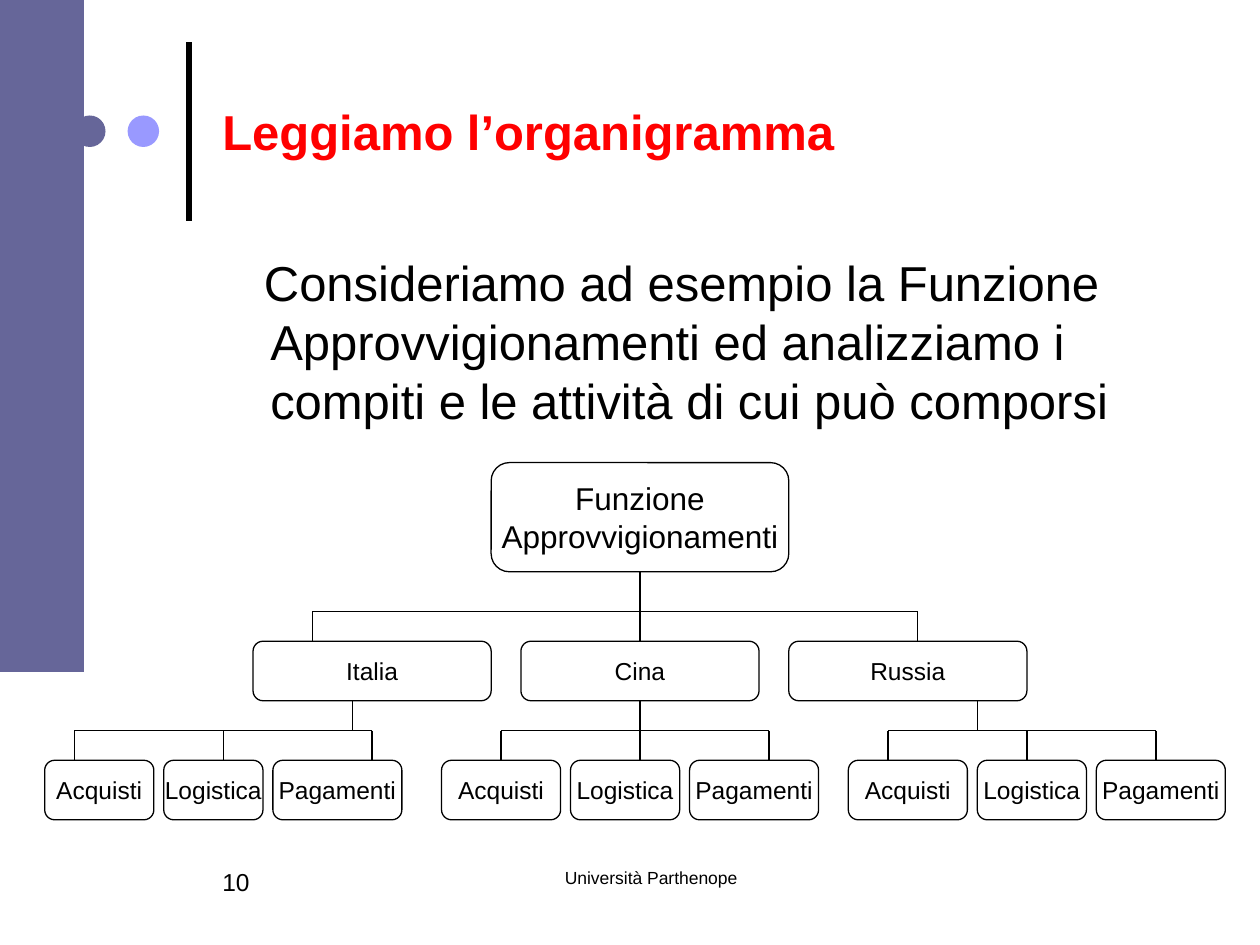
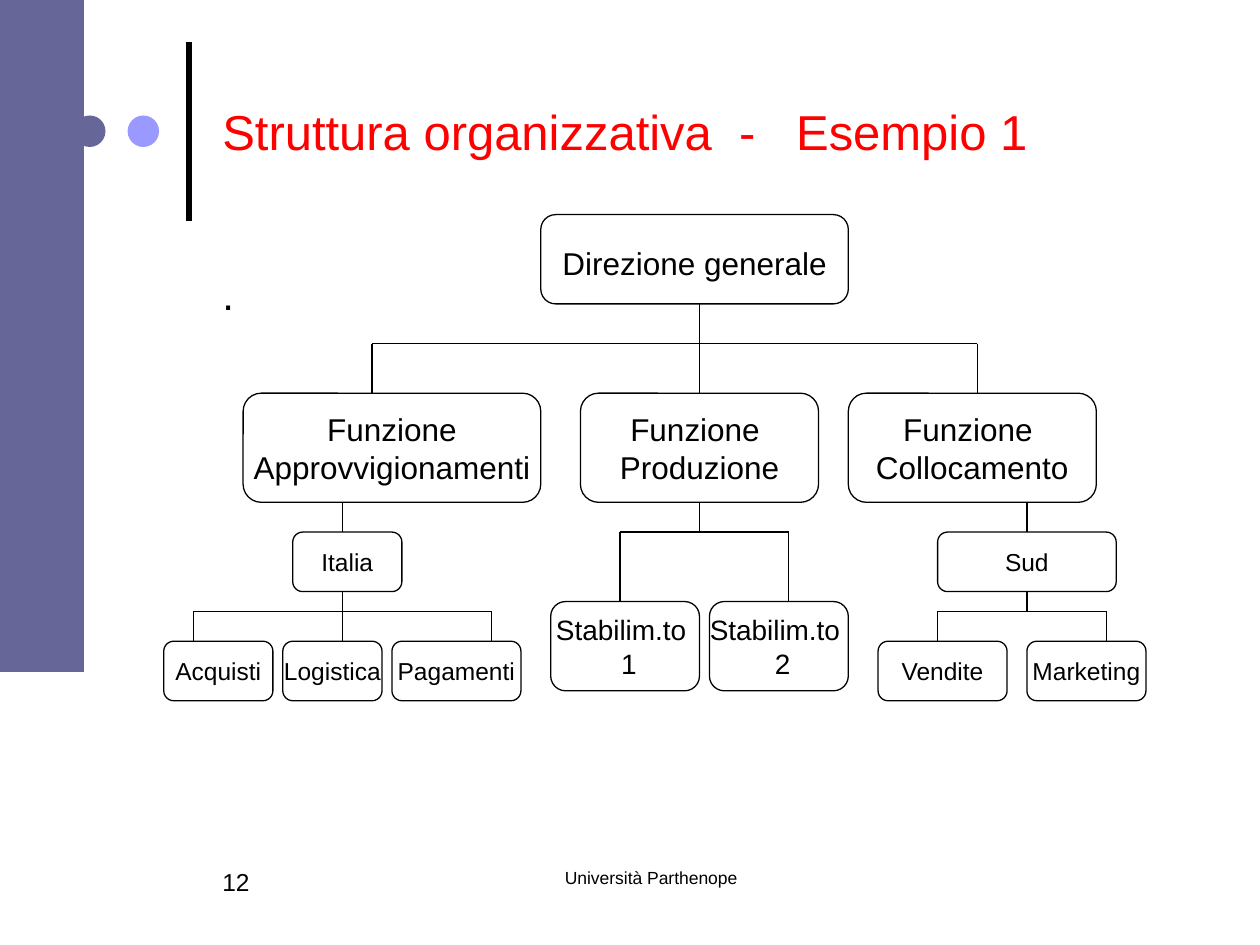
from dataclasses import dataclass

from lxml.etree import SubElement
from pptx import Presentation
from pptx.dml.color import RGBColor
from pptx.enum.shapes import MSO_CONNECTOR, MSO_SHAPE
from pptx.enum.text import MSO_ANCHOR, PP_ALIGN
from pptx.oxml.ns import qn
from pptx.util import Inches, Pt

BLACK = RGBColor(0, 0, 0)
WHITE = RGBColor(255, 255, 255)
RED = RGBColor(255, 0, 0)
SLATE = RGBColor(0x66, 0x66, 0x99)
LILAC = RGBColor(0x99, 0x99, 0xFF)
FONT = "Arial"


@dataclass
class Grid:
    """Square cells of one size, counted from a corner in inches."""
    left: float
    top: float
    cell: float

    def x(self, col):
        return Inches(self.left + col * self.cell)

    def y(self, row):
        return Inches(self.top + row * self.cell)

    def box(self, col, row, cols, rows):
        return (self.x(col), self.y(row),
                Inches(cols * self.cell), Inches(rows * self.cell))


PAGE = Grid(0, 0, 1 / 12)
CHART = Grid(0.04, 0.05, 1 / 12.7)  # cells of 2 mm
BOX_ROWS = 6
HEAD_ROWS = 11


def write(tf, text, size, color=BLACK, bold=False, align=PP_ALIGN.LEFT,
          anchor=MSO_ANCHOR.TOP, wrap=True, margin=0, indent=0):
    """Fill a text frame, one paragraph for each line of the text."""
    tf.word_wrap = wrap
    tf.vertical_anchor = anchor
    for i, line in enumerate(text.split("\n")):
        p = tf.paragraphs[0] if i == 0 else tf.add_paragraph()
        p.alignment = align
        if margin:
            pPr = p._p.get_or_add_pPr()
            pPr.set("marL", str(Inches(margin)))
            pPr.set("indent", str(Inches(indent)))
        r = p.add_run()
        r.text = line
        r.font.name = FONT
        r.font.size = Pt(size)
        r.font.bold = bold
        r.font.color.rgb = color


def add_text(s, box, text, size, **fmt):
    write(s.shapes.add_textbox(*box).text_frame, text, size, **fmt)


def add_shape(s, kind, box, fill, line=None):
    sp = s.shapes.add_shape(kind, *box)
    sp.shadow.inherit = False
    sp.fill.solid()
    sp.fill.fore_color.rgb = fill
    if line is None:
        sp.line.fill.background()
    else:
        sp.line.color.rgb = line
        sp.line.width = Pt(0.75)
    return sp


def add_line(s, grid, start, end, width=0.75):
    cx = s.shapes.add_connector(
        MSO_CONNECTOR.STRAIGHT, grid.x(start[0]), grid.y(start[1]),
        grid.x(end[0]), grid.y(end[1]))
    cx.line.color.rgb = BLACK
    cx.line.width = Pt(width)
    SubElement(cx._element.spPr, qn("a:effectLst"))


def unit(s, grid, col, row, cols, rows, text, size, drop=0):
    """One rounded box of the chart; drop lowers its text, in inches."""
    sp = add_shape(s, MSO_SHAPE.FLOWCHART_ALTERNATE_PROCESS,
                   grid.box(col, row, cols, rows), WHITE, BLACK)
    write(sp.text_frame, text, size, align=PP_ALIGN.CENTER,
          anchor=MSO_ANCHOR.MIDDLE, wrap=False)
    sp.text_frame.margin_top = Inches(0.05 + 2 * drop)


def unit_row(s, grid, col, row, units, rows=BOX_ROWS, size=14, gap=1):
    """Boxes side by side; units holds (text, columns) pairs."""
    for text, cols in units:
        unit(s, grid, col, row, cols, rows, text, size)
        col += cols + gap


def fork(s, grid, stem, top, bar, bottom, drops):
    """A stem down to a bar, and a line from the bar to each lower box."""
    add_line(s, grid, (stem, top), (stem, bar))
    add_line(s, grid, (drops[0], bar), (drops[-1], bar))
    for col in drops:
        add_line(s, grid, (col, bar), (col, bottom))


def page(prs, number, title, bold=False):
    """A new slide with the side band, dots, title and footer."""
    s = prs.slides.add_slide(prs.slide_layouts[6])
    add_line(s, PAGE, (18, 21), (18, 4), width=3)
    for col, color in ((7.05, SLATE), (12.15, LILAC)):
        add_shape(s, MSO_SHAPE.OVAL, PAGE.box(col, 11, 3, 3), color)
    add_shape(s, MSO_SHAPE.RECTANGLE, PAGE.box(0, 0, 8, 64), SLATE)
    add_text(s, PAGE.box(43, 82, 38, 6), "Università Parthenope", 10,
             align=PP_ALIGN.CENTER)
    add_text(s, PAGE.box(20, 82, 17, 6), number, 14)
    add_text(s, PAGE.box(20, 2.5, 92, 20), title, 28, color=RED, bold=bold,
             anchor=MSO_ANCHOR.MIDDLE)
    return s


def purchasing_chart(s, grid):
    unit(s, grid, 49, 46, 30, HEAD_ROWS, "Funzione\nApprovvigionamenti", 18)
    fork(s, grid, 64, 57, 61, 64, (31, 64, 92))
    unit_row(s, grid, 25, 64, [(name, 24) for name in ("Italia", "Cina", "Russia")],
             gap=3)
    countries = (  # stem, drops, first column, box widths
        (35, (7, 22, 37), 4, (11, 10, 13)),
        (64, (50, 64, 77), 44, (12, 11, 13)),
        (98, (89, 103, 116), 85, (12, 11, 13)),
    )
    for stem, drops, col, widths in countries:
        fork(s, grid, stem, 70, 73, 76, drops)
        unit_row(s, grid, col, 76,
                 zip(("Acquisti", "Logistica", "Pagamenti"), widths))


def company_chart(s, grid):
    unit(s, grid, 54, 21, 31, 9, "Direzione generale", 18, drop=0.03)
    fork(s, grid, 70, 30, 34, 39, (37, 70, 98))
    for col, cols, text in ((24, 30, "Funzione\nApprovvigionamenti"),
                            (58, 24, "Funzione \nProduzione"),
                            (85, 25, "Funzione \nCollocamento")):
        unit(s, grid, col, 39, cols, HEAD_ROWS, text, 18)

    fork(s, grid, 70, 50, 53, 60, (62, 79))
    unit_row(s, grid, 55, 60, (("Stabilim.to \n 1", 15), ("Stabilim.to \n 2", 14)),
             rows=9, size=16)

    branches = (  # stem, area box, drops, first column, gap, boxes
        (34, (29, 11, "Italia"), (19, 34, 49), 16, 1,
         (("Acquisti", 11), ("Logistica", 10), ("Pagamenti", 13))),
        (103, (94, 18, "Sud"), (94, 111), 88, 2,
         (("Vendite", 13), ("Marketing", 12))),
    )
    for stem, (area_col, cols, area), drops, col, gap, units in branches:
        add_line(s, grid, (stem, 50), (stem, 53))
        unit(s, grid, area_col, 53, cols, BOX_ROWS, area, 14)
        fork(s, grid, stem, 59, 61, 64, drops)
        unit_row(s, grid, col, 64, units, gap=gap)


def main():
    prs = Presentation()
    prs.slide_width, prs.slide_height = Inches(10), Inches(7.5)

    s = page(prs, "10", "Leggiamo l’organigramma", bold=True)
    add_text(s, PAGE.box(20, 23.5, 92, 20),
             "Consideriamo ad esempio la Funzione Approvvigionamenti ed "
             "analizziamo i compiti e le attività di cui può comporsi",
             28, margin=0.38, indent=-0.05)
    purchasing_chart(s, CHART)

    s = page(prs, "12", "Struttura organizzativa  -   Esempio 1")
    add_text(s, PAGE.box(20, 25, 92, 54), ".", 24, margin=0.38, indent=-0.38)
    company_chart(s, CHART)

    prs.save("out.pptx")


if __name__ == "__main__":
    main()
